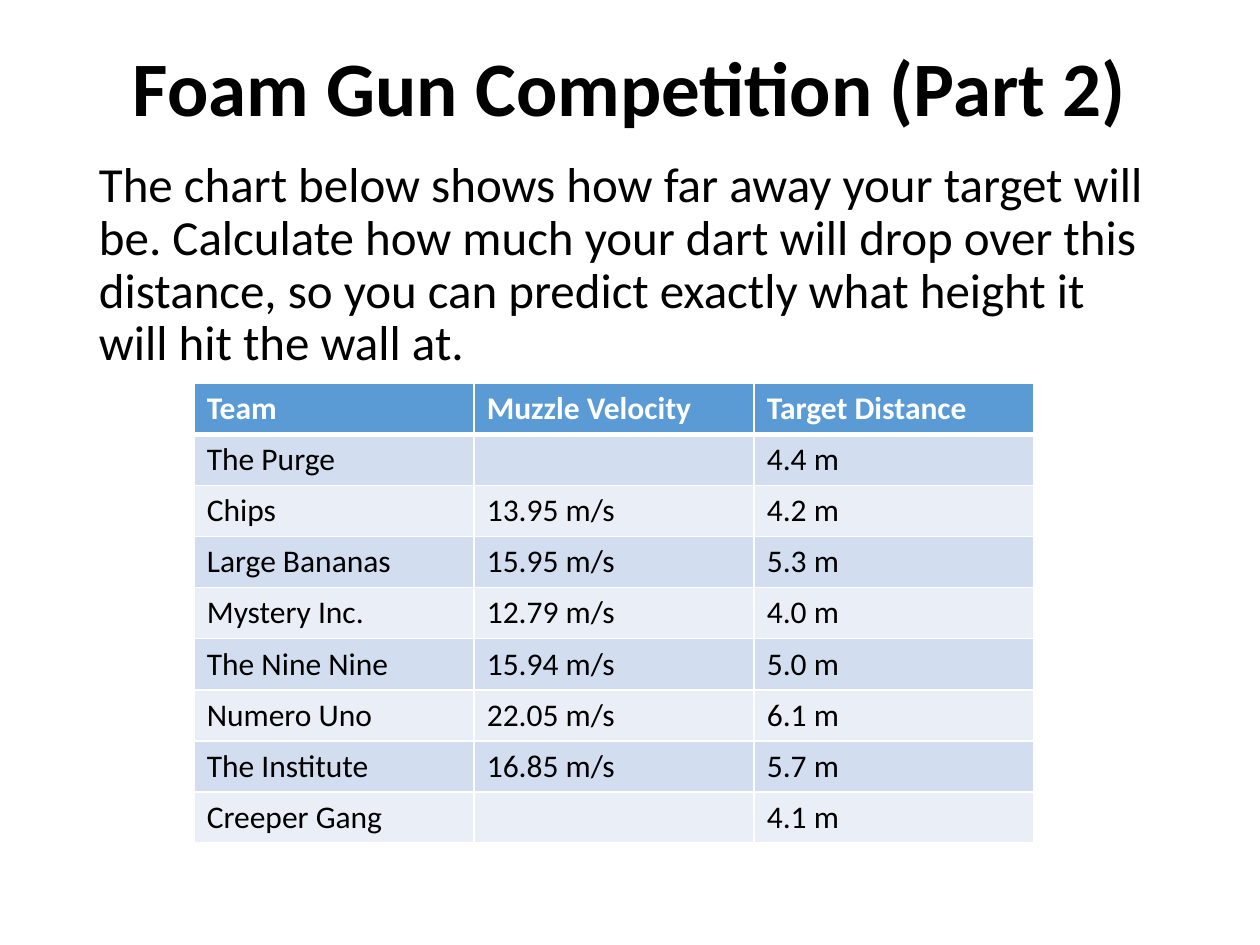
import lxml.etree
import pptx
import pptx.dml.color
import pptx.enum.text
import pptx.oxml.ns
import pptx.util

Pt = pptx.util.Pt
COLORS = {"ink": "000000", "paper": "FFFFFF", "header": "5B9BD5", "odd": "D2DEEF", "even": "EAEFF7"}
ALIGN = pptx.enum.text.PP_ALIGN
ANCHOR = pptx.enum.text.MSO_ANCHOR
INTRO = (
    "The chart below shows how far away your target will be. "
    "Calculate how much your dart will drop over this distance, "
    "so you can predict exactly what height it will hit the wall at."
)
TEAMS = [
    ("Team", "Muzzle Velocity", "Target Distance"),
    ("The Purge", "", "4.4 m"),
    ("Chips", "13.95 m/s", "4.2 m"),
    ("Large Bananas", "15.95 m/s", "5.3 m"),
    ("Mystery Inc.", "12.79 m/s", "4.0 m"),
    ("The Nine Nine", "15.94 m/s", "5.0 m"),
    ("Numero Uno", "22.05 m/s", "6.1 m"),
    ("The Institute", "16.85 m/s", "5.7 m"),
    ("Creeper Gang", "", "4.1 m"),
]


class SlideBuilder:
    """Holds the deck style and current slide, and adds each kind of element."""

    def __init__(self, slide, font="Calibri"):
        self.slide = slide
        self.font = font

    def color(self, name):
        return pptx.dml.color.RGBColor.from_string(COLORS[name])

    def set_text(self, frame, text, size, color="ink", bold=False, **layout):
        para = frame.paragraphs[0]
        for name, value in layout.items():
            setattr(para, name, value)
        para.font.size = Pt(size)
        if text:
            span = para.add_run()
            span.text = text
            for name, value in {"name": self.font, "size": Pt(size), "bold": bold}.items():
                setattr(span.font, name, value)
            span.font.color.rgb = self.color(color)

    def prepare(self, box, place, anchor):
        for name, value in zip(("left", "top", "width", "height"), place):
            setattr(box, name, Pt(value))
        settings = {
            "word_wrap": True,
            "auto_size": pptx.enum.text.MSO_AUTO_SIZE.NONE,
            "vertical_anchor": anchor,
        }
        for name, value in settings.items():
            setattr(box.text_frame, name, value)
        return box.text_frame

    def title(self, text, place):
        frame = self.prepare(self.slide.shapes.title, place, ANCHOR.MIDDLE)
        self.set_text(frame, text, 44, bold=True, alignment=ALIGN.CENTER, line_spacing=0.9)

    def body(self, text, place):
        box = self.slide.shapes.add_textbox(*map(Pt, place))
        frame = self.prepare(box, place, ANCHOR.TOP)
        self.set_text(frame, text, 28, alignment=ALIGN.LEFT, line_spacing=0.9)

    def borders(self, cell, widths):
        properties = cell._tc.get_or_add_tcPr()
        for index, (side, width) in enumerate(widths.items()):
            line = lxml.etree.Element(pptx.oxml.ns.qn(f"a:ln{side}"), w=str(Pt(width)))
            fill = lxml.etree.SubElement(line, pptx.oxml.ns.qn("a:solidFill"))
            lxml.etree.SubElement(fill, pptx.oxml.ns.qn("a:srgbClr"), val=COLORS["paper"])
            properties.insert(index, line)

    def table(self, rows, place):
        table = self.slide.shapes.add_table(len(rows), len(rows[0]), *map(Pt, place)).table
        for row, values in enumerate(rows):
            header = row == 0
            fill = "header" if header else ("even", "odd")[row % 2]
            widths = {"L": 1, "R": 1, "T": 3 if row == 1 else 1, "B": 3 if header else 1}
            for column, value in enumerate(values):
                cell = table.cell(row, column)
                cell.fill.solid()
                cell.fill.fore_color.rgb = self.color(fill)
                self.borders(cell, widths)
                self.set_text(cell.text_frame, value, 18, "paper" if header else "ink", header)


def main():
    deck = pptx.Presentation()
    deck.slide_width, deck.slide_height = Pt(720), Pt(540)
    page = SlideBuilder(deck.slides.add_slide(deck.slide_layouts[5]))
    page.title("Foam Gun Competition (Part 2)", (49.5, 0, 621, 104.4))
    page.body(INTRO, (49.5, 87.8, 621, 131))
    page.table(TEAMS, (111, 219, 480, 262.8))
    deck.save("out.pptx")


if __name__ == "__main__":
    main()
